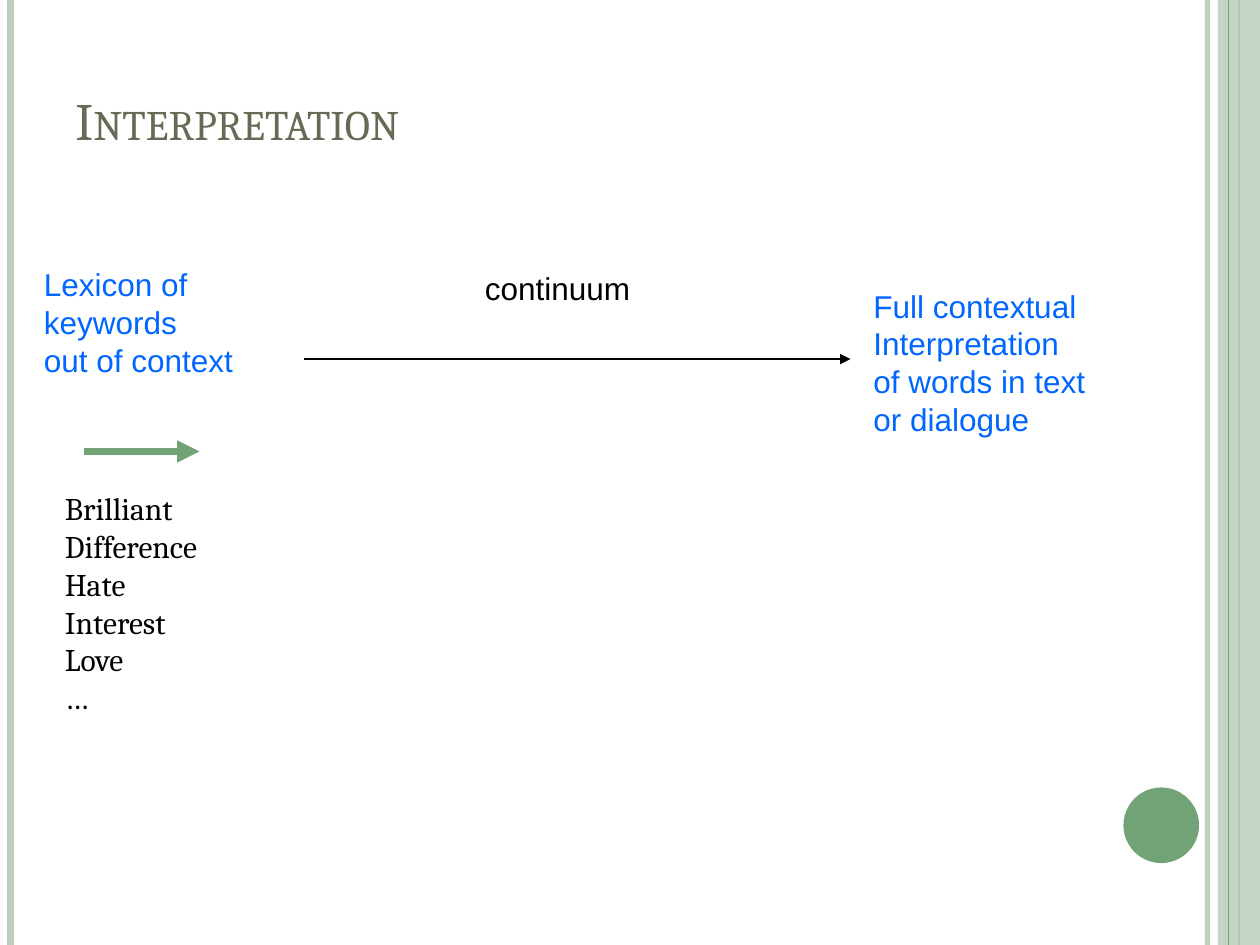
from dataclasses import dataclass

from lxml import etree
from pptx import Presentation
from pptx import util as u
from pptx.dml.color import RGBColor
from pptx.enum import shapes, text
from pptx.oxml.ns import qn


@dataclass(frozen=True)
class Theme:
    pale: str = "BCCEBD"
    green: str = "72A376"
    title: str = "676A55"
    blue: str = "0066FF"
    black: str = "000000"
    serif: str = "Cambria"
    sans: str = "Arial"
    title_size: int = 30
    body_size: int = 18


@dataclass(frozen=True)
class Line:
    start: tuple[float, float]
    end: tuple[float, float]
    color: str
    width: float
    opacity: int = 100
    arrow: bool = False


@dataclass(frozen=True)
class Shape:
    kind: shapes.MSO_SHAPE
    area: tuple[float, float, float, float]
    color: str
    opacity: int = 100


@dataclass(frozen=True)
class Label:
    area: tuple[float, float, float, float]
    lines: tuple[str, ...]
    color: str
    font: str
    size: int
    is_title: bool = False


THEME = Theme()

# The slide is a grid of 120 columns by 90 rows, twelve cells to the inch
COLUMNS, ROWS = 120, 90
CELL = u.Inches(10) // COLUMNS


def cells(*counts: float) -> list[int]:
    return [round(count * CELL) for count in counts]


def rule(column: float, color: str, width: float, opacity: int = 100) -> Line:
    """A vertical line over the full height of the slide."""
    return Line((column, 0), (column, ROWS), color, width, opacity)


def set_opacity(fill, percent: int) -> None:
    if percent < 100:
        color = fill._xPr.find(".//" + qn("a:srgbClr"))
        etree.SubElement(color, qn("a:alpha"), val=str(percent * 1000))


def draw_line(page, item: Line) -> None:
    line = page.shapes.add_connector(
        shapes.MSO_CONNECTOR.STRAIGHT, *cells(*item.start, *item.end))
    line.line.color.rgb = RGBColor.from_string(item.color)
    line.line.width = u.Pt(item.width)
    set_opacity(line.line.fill, item.opacity)
    properties = line._element.spPr
    if item.arrow:
        etree.SubElement(properties.find(qn("a:ln")), qn("a:tailEnd"), type="triangle")
    etree.SubElement(properties, qn("a:effectLst"))


def draw_shape(page, item: Shape) -> None:
    shape = page.shapes.add_shape(item.kind, *cells(*item.area))
    shape.shadow.inherit = False
    shape.fill.solid()
    shape.fill.fore_color.rgb = RGBColor.from_string(item.color)
    set_opacity(shape.fill, item.opacity)
    shape.line.fill.background()


def draw_label(page, item: Label) -> None:
    frame = page.shapes.add_textbox(*cells(*item.area)).text_frame
    frame.word_wrap = True
    if item.is_title:
        frame.vertical_anchor = text.MSO_ANCHOR.BOTTOM
    for index, words in enumerate(item.lines):
        para = frame.add_paragraph() if index else frame.paragraphs[0]
        span = para.add_run()
        span.text = words
        para.font.name = item.font
        para.font.size = u.Pt(item.size)
        para.font.color.rgb = RGBColor.from_string(item.color)
        if item.is_title:
            span._r.get_or_add_rPr().set("cap", "small")


# Side stripes and the round page marker, from back to front
FRAME = (
    rule(115, THEME.pale, 3, 93),
    rule(1, THEME.pale, 4.5),
    rule(118, THEME.green, 1.5),
    Shape(shapes.MSO_SHAPE.RECTANGLE, (116, 0, 4, ROWS), THEME.pale, 87),
    rule(117, THEME.green, 0.75),
    Shape(shapes.MSO_SHAPE.OVAL, (107, 75, 7.2, 7.2), THEME.green),
)

# Title, the two ends of the continuum, and the keyword list
CONTENT = (
    Label((6, 3.6, 98, 11.4), ("Interpretation",), THEME.title, THEME.serif,
          THEME.title_size, is_title=True),
    Label((3, 24.7, 26.4, 15.6), ("Lexicon of", "keywords", "out of context"),
          THEME.blue, THEME.sans, THEME.body_size),
    Label((82, 26.7, 29.3, 20.4),
          ("Full contextual", "Interpretation", "of words in text", "or dialogue"),
          THEME.blue, THEME.sans, THEME.body_size),
    Label((45, 25, 20.9, 6), ("continuum",), THEME.black, THEME.sans, THEME.body_size),
    Line((29, 34.2), (81, 34.2), THEME.black, 0.75, arrow=True),
    Line((8, 43), (19, 43), THEME.green, 4.25, arrow=True),
    Label((5, 46, 19.3, 30),
          ("Brilliant", "Difference", "Hate", "Interest", "Love", "…"),
          THEME.black, THEME.serif, THEME.body_size),
)

DRAWERS = {Line: draw_line, Shape: draw_shape, Label: draw_label}


def main() -> None:
    deck = Presentation()
    deck.slide_width, deck.slide_height = cells(COLUMNS, ROWS)
    page = deck.slides.add_slide(deck.slide_layouts[6])
    for item in FRAME + CONTENT:
        DRAWERS[type(item)](page, item)
    deck.save("out.pptx")


if __name__ == "__main__":
    main()
